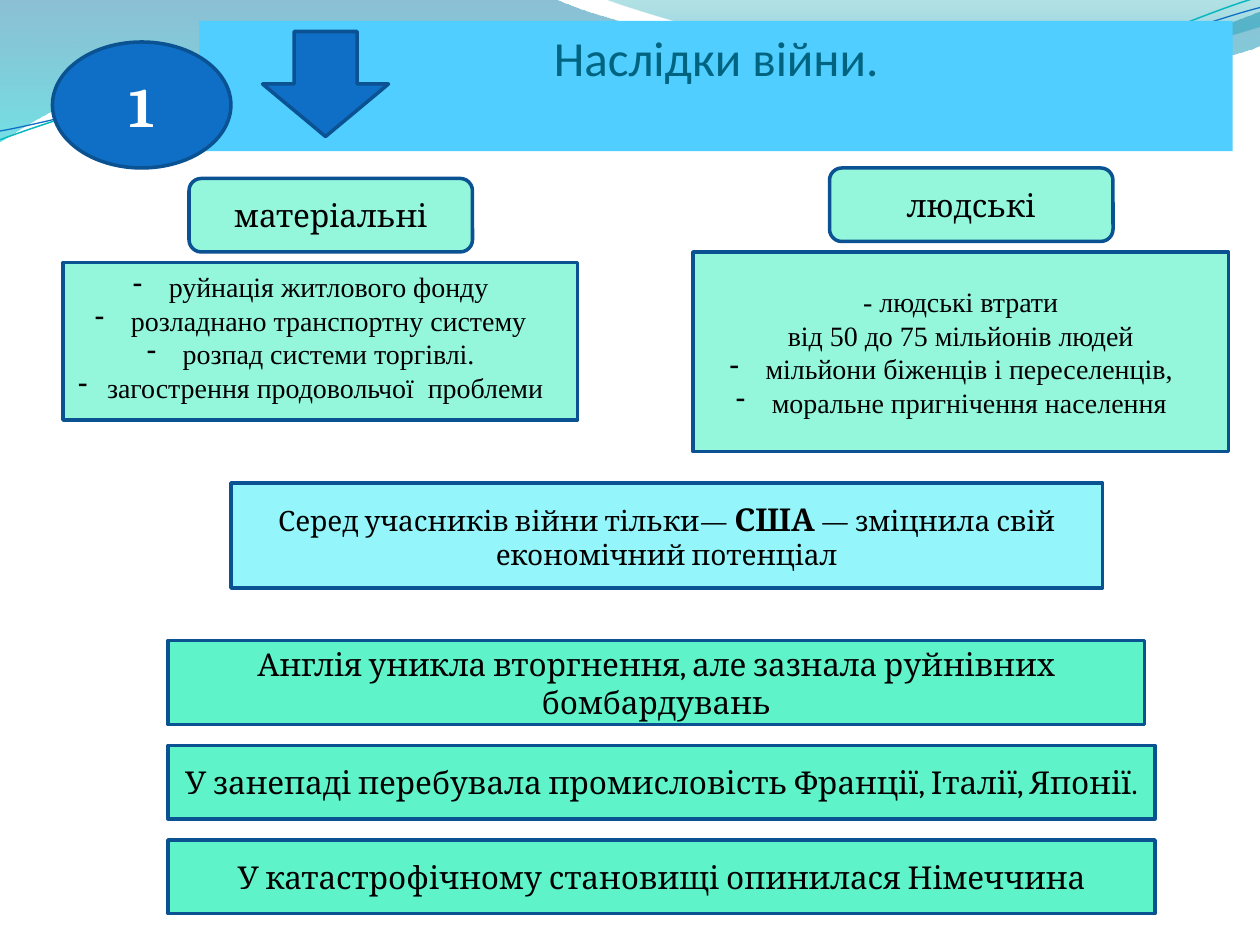
from pptx import Presentation, util as u
from pptx.dml.color import RGBColor
from pptx.enum import shapes, text
from pptx.oxml.ns import qn
from lxml import etree

COLS, ROWS, UNIT = 120, 90, u.Inches(1) / 12
KIND = shapes.MSO_SHAPE
EDGE, DEEP, MINT, GREEN = "0B5292", "0F6FC6", "94F7DC", "5FF3CA"
SERIF = {"name": "Cambria", "size": u.Pt(18), "bold": False}
SMALL = SERIF | {"size": u.Pt(16)}
PLAIN = SMALL | {"name": "Times New Roman"}
STRONG = SERIF | {"bold": True}
HEAD = SERIF | {"name": "Calibri", "size": u.Pt(28)}
MARK = STRONG | {"size": u.Pt(32)}

FILLS = [
    ([("0074A1", 0, 45), ("00C6CF", 1, 55)],
     [(-0.01, 0), (4.4, -0.01), (4.76, 0.17, 6.64, 0.63, 7.58, 0.63),
      (8.53, 0.63, 9.58, 0.26, 10, 0.09), (10.01, 0.36),
      (9.83, 0.44, 8.7, 0.76, 7.46, 0.75), (6.22, 0.75, 3.82, 0.28, 2.57, 0.34),
      (1.29, 0.36, 0.46, 0.83, -0.01, 1.13), (-0.01, 0)]),
    ([("00A1A9", 0, 30), ("008BBF", 0.8, 45)],
     [(4.79, -0.01), (5.09, 0.11, 6.82, 0.62, 7.69, 0.65),
      (8.56, 0.69, 9.61, 0.32, 10, 0.21), (10, 0), (4.79, -0.01)]),
]
LINES = [
    ("0AB8BF", 0.85, [(0, 1.11), (0.48, 0.93, 1.58, 0.57, 2.77, 0.52),
                      (3.95, 0.47, 5.93, 0.89, 7.13, 0.8),
                      (8.33, 0.71, 9.38, 0.15, 9.98, -0.02)]),
    (DEEP, 0.75, [(0, 1.04), (0.47, 0.96, 1.64, 0.61, 2.83, 0.56),
                  (4.03, 0.51, 5.97, 0.84, 7.17, 0.75),
                  (8.36, 0.67, 9.41, 0.21, 10, 0.06)]),
]


def rgb(code):
    """Turn a hex string into a colour."""
    return RGBColor.from_string(code)


def bend(shape, parts):
    """Join each three segments that stand for a curve into one cubic."""
    segs = iter(shape._element.findall(f".//{qn('a:lnTo')}"))
    for part in parts[1:]:
        seg = next(segs)
        if len(part) == 6:
            curve = etree.Element(qn("a:cubicBezTo"))
            seg.addprevious(curve)
            for step in (seg, next(segs), next(segs)):
                curve.append(step[0])
                step.getparent().remove(step)


def wave(slide, box, parts, close):
    """Draw one curved outline on a grid of ten columns across the box."""
    x, y, w, _ = box
    dots = [((x + part[i] * w / 10) * UNIT, (y + part[i + 1] * w / 10) * UNIT)
            for part in parts for i in range(0, len(part), 2)]
    form = slide.shapes.build_freeform(*dots[0])
    form.add_line_segments(dots[1:], close=close)
    shape = form.convert_to_shape()
    bend(shape, parts)
    shape.shadow.inherit = False
    return shape


def waves(slide, box):
    """Place the two tinted waves and the two thin lines."""
    for stops, parts in FILLS:
        shape = wave(slide, box, parts, True)
        shape.line.fill.background()
        shape.fill.gradient()
        shape.fill.gradient_angle = 270
        for stop, (code, place, alpha) in zip(shape.fill.gradient_stops, stops):
            stop.color.rgb = rgb(code)
            stop.position = place
            tint = shape._element.find(f".//{qn('a:srgbClr')}[@val='{code}']")
            etree.SubElement(tint, qn("a:alpha"), val=str(alpha * 1000))
    for code, width, parts in LINES:
        shape = wave(slide, box, parts, False)
        shape.fill.background()
        shape.line.color.rgb = rgb(code)
        shape.line.width = u.Pt(width)


def block(slide, box, fill, kind=KIND.RECTANGLE, edge=EDGE):
    """Add one filled shape on the grid."""
    shape = slide.shapes.add_shape(kind, *(round(v * UNIT) for v in box))
    shape.shadow.inherit = False
    shape.fill.solid()
    shape.fill.fore_color.rgb = rgb(fill)
    if edge:
        shape.line.color.rgb = rgb(edge)
        shape.line.width = u.Pt(2)
    else:
        shape.line.fill.background()
    return shape


def write(shape, paras, ink="000000", anchor=text.MSO_ANCHOR.MIDDLE):
    """Fill a shape with centred paragraphs of (words, format) runs."""
    frame = shape.text_frame
    frame.word_wrap = True
    frame.vertical_anchor = anchor
    for n, runs in enumerate(paras):
        para = frame.add_paragraph() if n else frame.paragraphs[0]
        para.alignment = text.PP_ALIGN.CENTER
        for words, form in runs:
            run = para.add_run()
            run.text = words
            run.font.color.rgb = rgb(ink)
            for key, val in form.items():
                setattr(run.font, key, val)


def dash(para):
    """Give a paragraph a hanging dash."""
    props = para._p.get_or_add_pPr()
    props.set("marL", str(u.Inches(0.08)))
    props.set("indent", str(-u.Inches(0.23)))
    etree.SubElement(props, qn("a:buChar"), char="-")


def header(slide, box):
    """Place the title bar, the number and the arrow."""
    x, y, w, h = box
    bar = block(slide, (x + 14, y, w - 14, h), "4FCEFF", edge=None)
    write(bar, [[("Наслідки війни.", HEAD)]], "00637F", text.MSO_ANCHOR.TOP)
    disc = block(slide, (x, y + 2, 17, 12), DEEP, KIND.OVAL)
    write(disc, [[("1", MARK)]], "FFFFFF")
    block(slide, (x + 21, y, 10, 12), DEEP, KIND.RIGHT_ARROW).rotation = 90


def column(slide, box, name, lines, first=0, foot=0.05):
    """Place a tag above its list; dashes begin at line number first."""
    x, y, w, h = box
    tag = block(slide, (x + (w - 27) / 2 + 1, y, 27, 7), MINT, KIND.ROUNDED_RECTANGLE)
    write(tag, [[(name, SERIF)]])
    body = block(slide, (x, y + 8, w, h - 8), MINT)
    body.text_frame.margin_bottom = u.Inches(foot)
    write(body, [[(line, PLAIN)] for line in lines])
    for para in body.text_frame.paragraphs[first:]:
        dash(para)


def bands(slide, box, rows, gap=2):
    """Stack the country bands, each given as width, height and words."""
    x, y, _, _ = box
    for w, h, words in rows:
        write(block(slide, (x, y, w, h), GREEN), [[(words, SERIF)]])
        y += h + gap


def main():
    """Build the slide and save it."""
    deck = Presentation()
    deck.slide_width, deck.slide_height = round(COLS * UNIT), round(ROWS * UNIT)
    slide = deck.slides.add_slide(deck.slide_layouts[6])
    waves(slide, (0, 0, COLS, 14))
    header(slide, (5, 2, 112.4, 12.4))
    column(slide, (6, 17, 49, 23), "матеріальні", [
        " руйнація житлового фонду", " розладнано транспортну систему",
        " розпад системи торгівлі.", "загострення продовольчої  проблеми"], foot=0.12)
    column(slide, (66, 16, 51, 27), "людські", [
        "- людські втрати", "від 50 до 75 мільйонів людей",
        " мільйони біженців і переселенців,", " моральне пригнічення населення"], 2)
    write(block(slide, (22, 46, 83, 10), "94F5FA"), [[
        ("Серед учасників війни тільки— ", SMALL), ("США", STRONG),
        (" — зміцнила свій економічний потенціал", SMALL)]])
    bands(slide, (16, 61, 94, 26), [
        (93, 8, "Англія уникла вторгнення, але зазнала руйнівних бомбардувань"),
        (94, 7, "У занепаді перебувала промисловість Франції, Італії, Японії."),
        (94, 7, "У катастрофічному становищі опинилася Німеччина")])
    deck.save("out.pptx")


if __name__ == "__main__":
    main()
